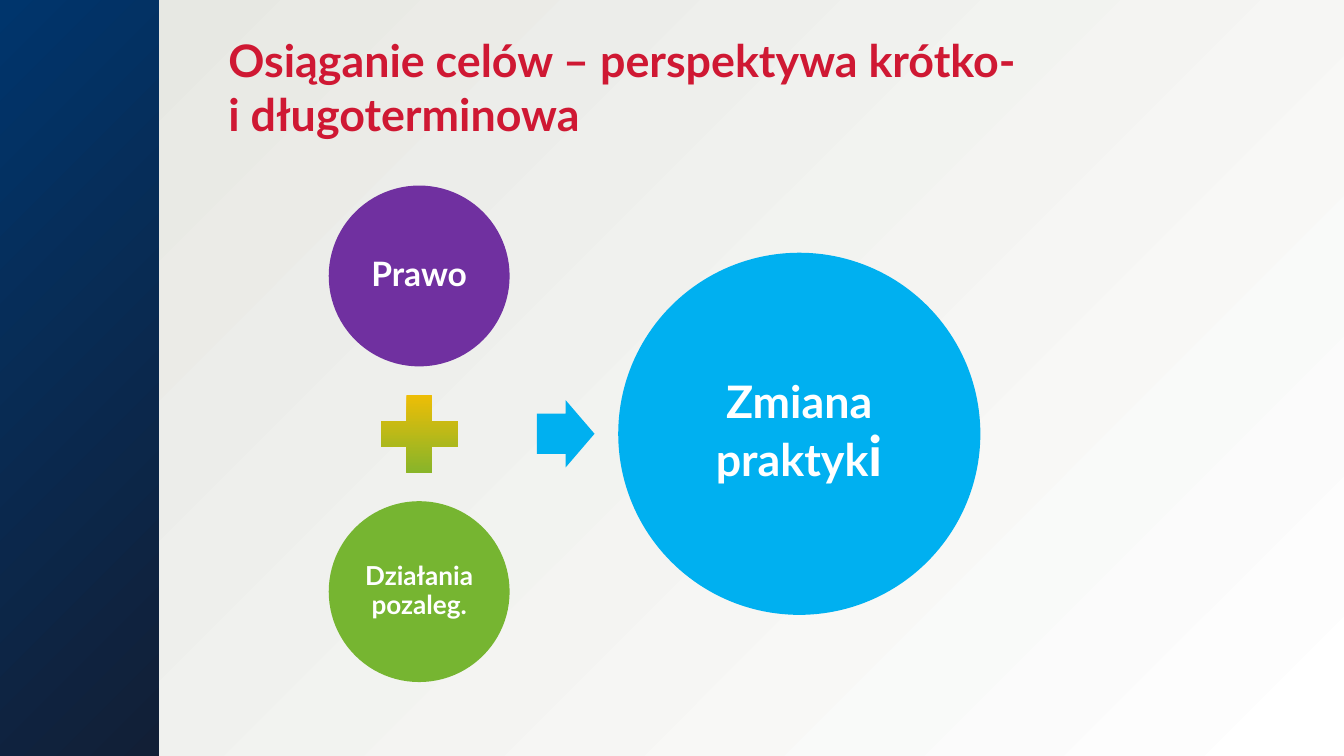
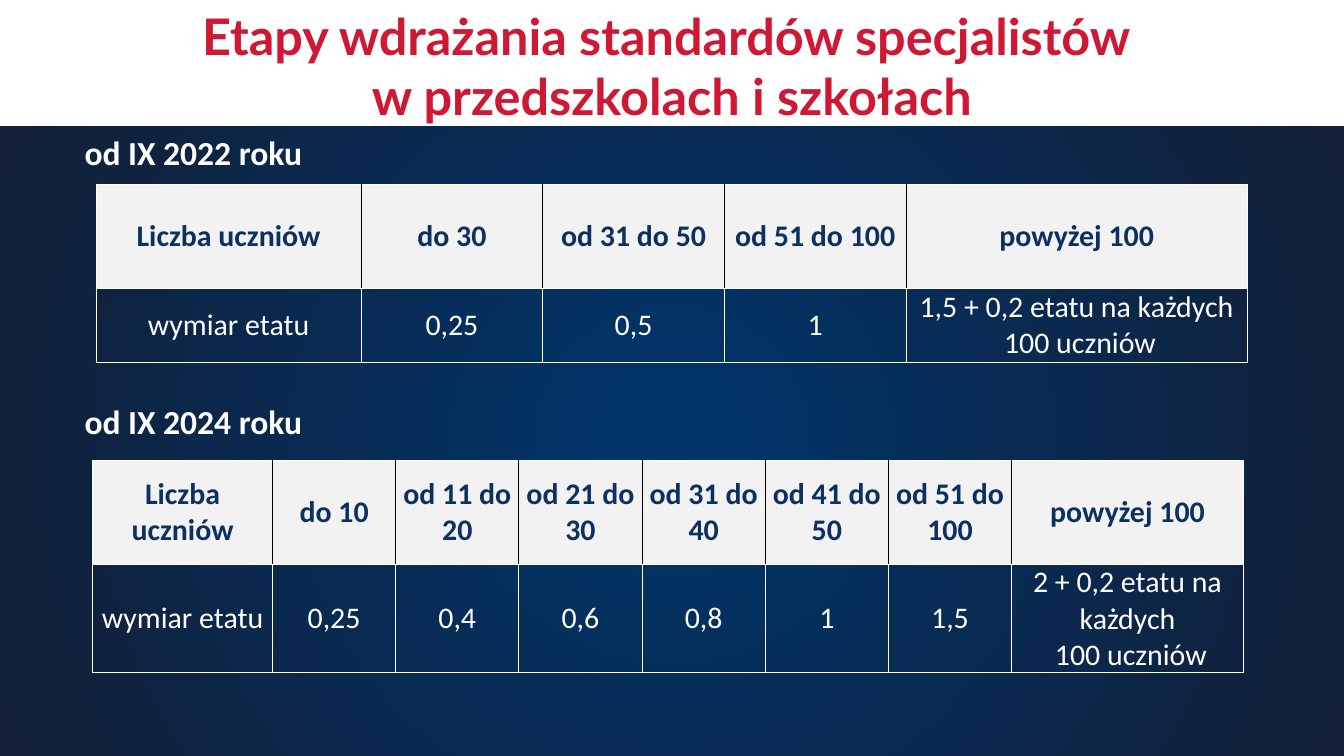
from pptx import Presentation
from pptx.dml.color import RGBColor
from pptx.enum.shapes import MSO_SHAPE
from pptx.enum.text import MSO_ANCHOR, PP_ALIGN
from pptx.oxml import parse_xml
from pptx.oxml.ns import nsdecls, qn
from pptx.util import Pt

RECT, OVAL = MSO_SHAPE.RECTANGLE, MSO_SHAPE.OVAL
PLUS, ARROW = MSO_SHAPE.MATH_PLUS, MSO_SHAPE.RIGHT_ARROW
TOP, MIDDLE = MSO_ANCHOR.TOP, MSO_ANCHOR.MIDDLE
LEFT, CENTER = PP_ALIGN.LEFT, PP_ALIGN.CENTER

WHITE = RGBColor(0xFF, 0xFF, 0xFF)
BLACK = RGBColor(0x00, 0x00, 0x00)
RED = RGBColor(0xCF, 0x18, 0x33)
NAVY = RGBColor(0x00, 0x35, 0x6C)
DARK_NAVY = RGBColor(0x12, 0x1F, 0x36)
HEADER_NAVY = RGBColor(0x0C, 0x30, 0x61)
WARM_GREY = RGBColor(0xE5, 0xE6, 0xE1)
HEADER_GREY = RGBColor(0xF2, 0xF2, 0xF2)
PURPLE = RGBColor(0x70, 0x30, 0xA0)
GREEN = RGBColor(0x76, 0xB5, 0x31)
PLUS_GREEN = RGBColor(0x76, 0xB3, 0x30)
AMBER = RGBColor(0xFF, 0xBF, 0x00)
SKY = RGBColor(0x00, 0xB0, 0xF0)

HEAD_FONT, BODY_FONT = "Lato", "Calibri"
SLIDE_W, SLIDE_H = 1440, 810
CORNER = (100, 100, 0, 0)
CENTRE = (50, 50, 50, 50)
ROW_HEIGHTS = (111.6, 79.2)


# Fills
def set_gradient(fill, start, end):
    fill.gradient()
    for stop, position, color in zip(fill.gradient_stops, (0, 1), (start, end)):
        stop.position = position
        stop.color.rgb = color


def make_circular(element, focus):
    """Turn the linear gradient in element into a circular one."""
    lin = element.find(".//" + qn("a:lin"))
    l, t, r, b = (side * 1000 for side in focus)
    circle = parse_xml(
        f'<a:path {nsdecls("a")} path="circle">'
        f'<a:fillToRect l="{l}" t="{t}" r="{r}" b="{b}"/></a:path>')
    lin.getparent().replace(lin, circle)


# Text
def style_paragraph(p, size, color, font, bold=True, align=LEFT):
    p.alignment = align
    p.font.size = Pt(size)
    p.font.name = font
    p.font.bold = bold
    p.font.color.rgb = color


def add_text(slide, text, box, size, color, font, align=LEFT, anchor=TOP):
    tf = slide.shapes.add_textbox(*map(Pt, box)).text_frame
    tf.word_wrap = True
    tf.vertical_anchor = anchor
    p = tf.paragraphs[0]
    p.text = text
    style_paragraph(p, size, color, font, align=align)
    return p


def add_title(slide, text, box, size, align=LEFT):
    p = add_text(slide, text, box, size, RED, HEAD_FONT, align, MIDDLE)
    p.space_before = Pt(30)


# Shapes
def add_shape(slide, kind, box, color=None):
    sp = slide.shapes.add_shape(kind, *map(Pt, box))
    sp.shadow.inherit = False
    sp.line.fill.background()
    if color is not None:
        sp.fill.solid()
        sp.fill.fore_color.rgb = color
    return sp


def add_band(slide, box, start, end, focus):
    sp = add_shape(slide, RECT, box)
    set_gradient(sp.fill, start, end)
    make_circular(sp.element, focus)


def add_circle(slide, left, top, diameter, color, text, size, inset):
    sp = add_shape(slide, OVAL, (left, top, diameter, diameter), color)
    tf = sp.text_frame
    tf.word_wrap = True
    tf.vertical_anchor = MIDDLE
    tf.margin_left = tf.margin_right = tf.margin_top = tf.margin_bottom = Pt(inset)
    p = tf.paragraphs[0]
    p.text = text
    p.line_spacing = 0.9
    style_paragraph(p, size, WHITE, HEAD_FONT, align=CENTER)
    return p


# Tables
def set_borders(cell, left, right):
    tc_pr = cell._tc.get_or_add_tcPr()
    for side, color in zip("LRTB", (left, right, WHITE, WHITE)):
        tc_pr.append(parse_xml(
            f'<a:ln{side} {nsdecls("a")} w="12700"><a:solidFill>'
            f'<a:srgbClr val="{color}"/></a:solidFill></a:ln{side}>'))


def fill_cell(cell, text, is_header, is_first, is_last):
    inner = BLACK if is_header else WHITE
    set_borders(cell, WHITE if is_first else inner, WHITE if is_last else inner)
    if is_header:
        cell.fill.solid()
        cell.fill.fore_color.rgb = HEADER_GREY
    else:
        cell.fill.background()
    cell.margin_left = cell.margin_right = Pt(3.6)
    cell.margin_top = cell.margin_bottom = 0
    cell.vertical_anchor = MIDDLE
    p = cell.text_frame.paragraphs[0]
    p.text = text
    style_paragraph(p, 32, HEADER_NAVY if is_header else WHITE, BODY_FONT,
                    bold=is_header, align=CENTER)


def add_staffing_table(slide, left, top, widths, rows):
    frame = slide.shapes.add_table(len(rows), len(widths), Pt(left), Pt(top),
                                   Pt(sum(widths)), Pt(sum(ROW_HEIGHTS)))
    table = frame.table
    table.first_row = table.horz_banding = False
    for column, width in zip(table.columns, widths):
        column.width = Pt(width)
    for i, values in enumerate(rows):
        table.rows[i].height = Pt(ROW_HEIGHTS[i])
        for j, text in enumerate(values):
            fill_cell(table.cell(i, j), text, i == 0, j == 0, j == len(widths) - 1)


# Slides
def build_goals_slide(slide):
    set_gradient(slide.background.fill, WHITE, WARM_GREY)
    make_circular(slide.element, CORNER)
    add_band(slide, (0, 0, 170, SLIDE_H), DARK_NAVY, NAVY, CORNER)
    add_title(slide, "Osiąganie celów – perspektywa krótko-\ni długoterminowa",
              (237.6, 0, SLIDE_W - 237.6, 185.8), 48)

    # Two inputs stacked around a plus, leading to the result
    left, middle = 352.2, 464.8
    small, plus, gap, big = 193.8, 112.4, 16, 388
    plus_top = middle - plus / 2
    add_circle(slide, left, plus_top - gap - small, small, PURPLE, "Prawo", 36, 3.6)
    sp = add_shape(slide, PLUS, (left + (small - plus) / 2, plus_top, plus, plus))
    set_gradient(sp.fill, AMBER, PLUS_GREEN)
    sp.fill.gradient_angle = 270
    add_circle(slide, left, plus_top + plus + gap, small, GREEN,
               "Działania pozaleg.", 28, 2.8)
    arrow = add_shape(slide, ARROW, (575.2, middle - 36, 61.8, 72), SKY)
    arrow.adjustments[0] = 0.6
    p = add_circle(slide, 662.4, middle - big / 2, big, SKY, "Zmiana praktyk", 48, 5)
    r = p.add_run()
    r.text = "i"
    r.font.size = Pt(60)


def build_stages_slide(slide):
    band_top = 135.2
    add_band(slide, (0, band_top, SLIDE_W, SLIDE_H - band_top), NAVY, DARK_NAVY, CENTRE)
    add_title(slide, "Etapy wdrażania standardów specjalistów \nw przedszkolach i szkołach",
              (0, 3, SLIDE_W, 134.6), 54, CENTER)
    for text, top in (("od IX 2022 roku", 138.2), ("od IX 2024 roku", 426.2)):
        add_text(slide, text, (83.5, top, 420, 51), 36, WHITE, BODY_FONT)

    add_staffing_table(
        slide, 103, 197.3, [284] + [194.6] * 3 + [365.6],
        [["Liczba uczniów", "do 30", "od 31 do 50", "od 51 do 100", "powyżej 100"],
         ["wymiar etatu", "0,25", "0,5", "1",
          "1,5 + 0,2 etatu na każdych\n 100 uczniów"]])
    add_staffing_table(
        slide, 99.4, 493.2, [192.6] + [132] * 6 + [248.4],
        [["Liczba uczniów", "do 10", "od 11 do 20", "od 21 do 30", "od 31 do 40",
          "od 41 do 50", "od 51 do 100", "powyżej 100"],
         ["wymiar etatu", "0,25", "0,4", "0,6", "0,8", "1", "1,5",
          "2 + 0,2 etatu na każdych\n 100 uczniów"]])


def main():
    prs = Presentation()
    prs.slide_width, prs.slide_height = Pt(SLIDE_W), Pt(SLIDE_H)
    blank = prs.slide_layouts[6]
    for build in (build_goals_slide, build_stages_slide):
        build(prs.slides.add_slide(blank))
    prs.save("out.pptx")


if __name__ == "__main__":
    main()
